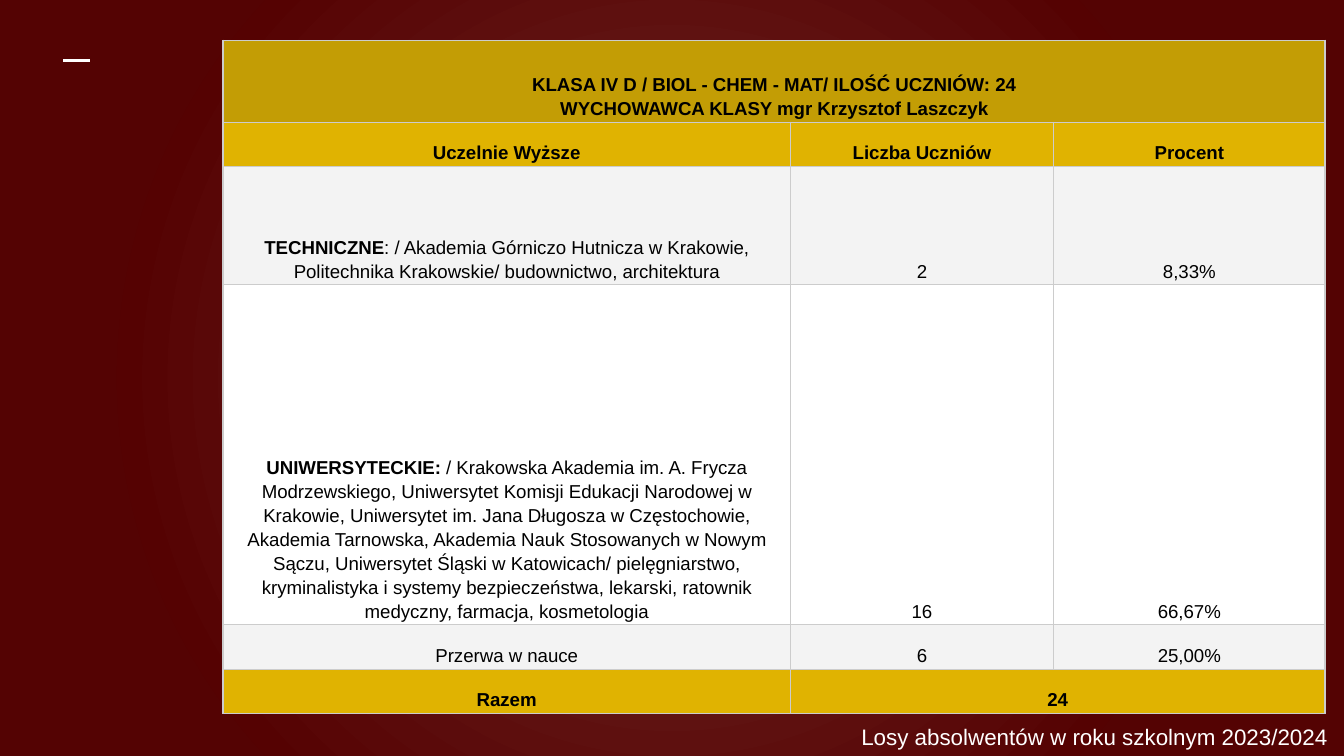
from pptx import Presentation
from pptx.dml.color import RGBColor
from pptx.enum.shapes import MSO_CONNECTOR
from pptx.enum.text import MSO_ANCHOR, PP_ALIGN
from pptx.oxml import parse_xml
from pptx.oxml.ns import nsdecls
from pptx.oxml.xmlchemy import OxmlElement
from pptx.util import Inches, Pt

STRAIGHT = MSO_CONNECTOR.STRAIGHT
BOTTOM = MSO_ANCHOR.BOTTOM
CENTER, LEFT = PP_ALIGN.CENTER, PP_ALIGN.LEFT
FONT = "Arial"
COLORS = {
    "glow": "702D2A", "maroon": "550202", "edge": "540303",
    "title": "C39D05", "header": "E0B301", "band": "F3F3F3",
    "white": "FFFFFF", "black": "000000", "border": "CCCCCC",
}
COLUMN_WIDTHS = [4.22, 1.96, 2.02]
ROWS = [
    (0.61, "title", [[[("KLASA IV D / BIOL - CHEM - MAT/ ILOŚĆ UCZNIÓW: 24", True)],
                      [("WYCHOWAWCA KLASY mgr Krzysztof Laszczyk", True)]]]),
    (0.33, "header", [[[("Uczelnie Wyższe", True)]], [[("Liczba Uczniów", True)]],
                      [[("Procent", True)]]]),
    (0.88, "band", [[[("TECHNICZNE", True),
                      (": / Akademia Górniczo Hutnicza w Krakowie, Politechnika "
                       "Krakowskie/ budownictwo, architektura", False)]],
                    [[("2", False)]], [[("8,33%", False)]]]),
    (2.53, "white", [[[("UNIWERSYTECKIE:", True),
                       (" / Krakowska Akademia im. A. Frycza Modrzewskiego, Uniwersytet "
                        "Komisji Edukacji Narodowej w Krakowie, Uniwersytet im. Jana Długosza "
                        "w Częstochowie, Akademia Tarnowska, Akademia Nauk Stosowanych w Nowym "
                        "Sączu, Uniwersytet Śląski w Katowicach/ pielęgniarstwo, kryminalistyka "
                        "i systemy bezpieczeństwa, lekarski, ratownik medyczny, farmacja, "
                        "kosmetologia", False)]],
                     [[("16", False)]], [[("66,67%", False)]]]),
    (0.33, "band", [[[("Przerwa w nauce", False)]], [[("6", False)]],
                    [[("25,00%", False)]]]),
    (0.33, "header", [[[("Razem", True)]], [[("24", True)]]]),
]


def rgb(name):
    """Return the named colour."""
    return RGBColor.from_string(COLORS[name])


def write_text(frame, paragraphs, size=10, color="black", align=CENTER, spacing=1.15):
    """Fill a text frame with paragraphs of (text, bold) runs."""
    for index, runs in enumerate(paragraphs):
        paragraph = frame.add_paragraph() if index else frame.paragraphs[0]
        paragraph.alignment = align
        paragraph.line_spacing = spacing
        for text, bold in runs:
            run = paragraph.add_run()
            run.text = text
            run.font.name = FONT
            run.font.size = Pt(size)
            run.font.bold = bold
            run.font.color.rgb = rgb(color)


def paint_background(slide):
    """Give the slide a circular maroon gradient."""
    stops = "".join(
        f'<a:gs pos="{position * 1000}"><a:srgbClr val="{COLORS[name]}"/></a:gs>'
        for position, name in [(0, "glow"), (72, "maroon"), (100, "edge")])
    slide.element.cSld.insert(0, parse_xml(
        f'<p:bg {nsdecls("p", "a")}><p:bgPr><a:gradFill><a:gsLst>{stops}</a:gsLst>'
        '<a:path path="circle"><a:fillToRect l="50000" t="50000" r="50000" b="50000"/>'
        '</a:path></a:gradFill><a:effectLst/></p:bgPr></p:bg>'))


def add_dash(slide, left, top, width):
    """Draw the short white accent line."""
    dash = slide.shapes.add_connector(
        STRAIGHT, Inches(left), Inches(top), Inches(left + width), Inches(top))
    dash.line.color.rgb = rgb("white")
    dash.line.width = Pt(1.5)
    dash.element.spPr.append(OxmlElement("a:effectLst"))


def style_cell(cell, fill):
    """Set a cell's margins, anchor, borders and fill."""
    cell.margin_left = cell.margin_right = Inches(0.03)
    cell.margin_top = cell.margin_bottom = Inches(0.02)
    cell.vertical_anchor = BOTTOM
    properties = cell._tc.get_or_add_tcPr()
    for side in ("lnL", "lnR", "lnT", "lnB"):
        properties.append(parse_xml(
            f'<a:{side} {nsdecls("a")} w="{Pt(0.75)}"><a:solidFill>'
            f'<a:srgbClr val="{COLORS["border"]}"/></a:solidFill></a:{side}>'))
    cell.fill.solid()
    cell.fill.fore_color.rgb = rgb(fill)


def add_graduates_table(slide, left, top):
    """Build the table of graduates' destinations."""
    width, height = sum(COLUMN_WIDTHS), sum(row[0] for row in ROWS)
    last = len(COLUMN_WIDTHS) - 1
    table = slide.shapes.add_table(
        len(ROWS), len(COLUMN_WIDTHS),
        Inches(left), Inches(top), Inches(width), Inches(height)).table
    for column, column_width in zip(table.columns, COLUMN_WIDTHS):
        column.width = Inches(column_width)
    for index, (row_height, fill, contents) in enumerate(ROWS):
        table.rows[index].height = Inches(row_height)
        for cell in table.rows[index].cells:
            style_cell(cell, fill)
        for position, paragraphs in enumerate(contents):
            write_text(table.cell(index, position).text_frame, paragraphs)
        if len(contents) <= last:
            table.cell(index, len(contents) - 1).merge(table.cell(index, last))


def add_caption(slide, left, top, width, height):
    """Place the school-year caption."""
    frame = slide.shapes.add_textbox(
        Inches(left), Inches(top), Inches(width), Inches(height)).text_frame
    frame.word_wrap = True
    frame.margin_left = frame.margin_right = Inches(0.1)
    frame.margin_top = frame.margin_bottom = Inches(0.1)
    write_text(frame, [[("Losy absolwentów w roku szkolnym 2023/2024", False)]],
               size=12, color="white", align=LEFT, spacing=1.0)


def main():
    """Build and save the slide."""
    deck = Presentation()
    deck.slide_width = Inches(10)
    deck.slide_height = deck.slide_width * 9 // 16
    slide = deck.slides.add_slide(deck.slide_layouts[6])
    paint_background(slide)
    add_dash(slide, 0.47, 0.45, 0.2)
    add_graduates_table(slide, 1.66, 0.3)
    add_caption(slide, 6.31, 5.28, 3.69, 0.38)
    deck.save("out.pptx")


if __name__ == "__main__":
    main()
